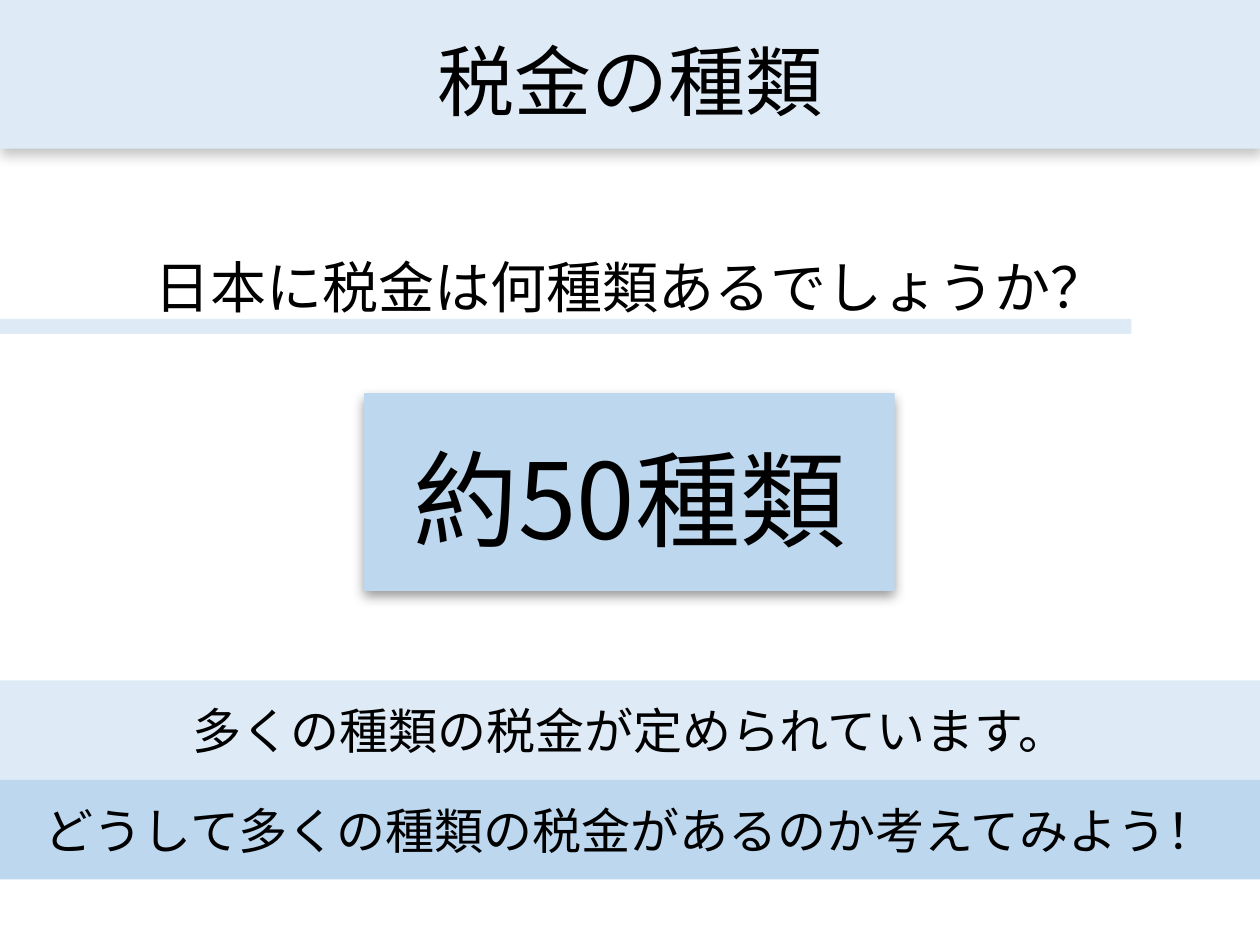
from lxml.etree import SubElement
from pptx import Presentation
from pptx.dml.color import RGBColor
from pptx.enum.shapes import MSO_SHAPE as Shape
from pptx.enum.text import MSO_ANCHOR as Anchor, PP_ALIGN as Align
from pptx.oxml.ns import qn
from pptx.util import Inches, Pt

PALE, BLUE, BLACK = "DEEBF7", "BDD7EE", "000000"
JAPANESE = "Noto Sans CJK JP"
RAISED = (0, 0.08, 0, 0)
LEVEL = (0.1, 0, 0.1, 0)


def color(value):
    return RGBColor.from_string(value)


def apply(target, values):
    for name, value in values.items():
        setattr(target, name, value)


def write(shape, text, size, insets=LEVEL, font=JAPANESE):
    frame = shape.text_frame
    left, top, right, bottom = map(Inches, insets)
    apply(frame, {
        "word_wrap": True, "vertical_anchor": Anchor.MIDDLE,
        "margin_left": left, "margin_top": top,
        "margin_right": right, "margin_bottom": bottom,
    })
    para = frame.paragraphs[0]
    para.alignment = Align.CENTER
    span = para.add_run()
    span.text = text
    apply(span.font, {"size": Pt(size), "name": font})
    span.font.color.rgb = color(BLACK)
    SubElement(span.font._element, qn("a:ea"), typeface=JAPANESE)


def add_band(page, box, fill):
    band = page.shapes.add_shape(Shape.RECTANGLE, *map(Inches, box))
    band.fill.solid()
    band.fill.fore_color.rgb = color(fill)
    band.line.fill.background()
    band.shadow.inherit = False
    return band


def cast_shadow(shape, opacity):
    effects = shape._element.spPr.find(qn("a:effectLst"))
    shadow = SubElement(effects, qn("a:outerShdw"), blurRad=str(Pt(7)),
                        dist=str(Pt(3)), dir="5400000", algn="t", rotWithShape="0")
    tint = SubElement(shadow, qn("a:srgbClr"), val=BLACK)
    SubElement(tint, qn("a:alpha"), val=str(opacity * 1000))


def add_title(page, box):
    title = add_band(page, box, PALE)
    cast_shadow(title, 23)
    write(title, "税金の種類", 44, RAISED, "Arial")


def add_question(page, box):
    left, top, width, height = box
    question = page.shapes.add_textbox(*map(Inches, box))
    write(question, "日本に税金は何種類あるでしょうか？", 32)
    add_band(page, (0, top + 0.85, left + width - 0.75, 0.12), PALE)


def add_answer(page, box):
    answer = add_band(page, box, BLUE)
    cast_shadow(answer, 40)
    write(answer, "約50種類", 60, RAISED)


def add_summary(page, box):
    left, top, width, height = box
    rows = [
        ("多くの種類の税金が定められています。", PALE),
        ("どうして多くの種類の税金があるのか考えてみよう！", BLUE),
    ]
    row_height = height / len(rows)
    for index, (text, fill) in enumerate(rows):
        band = add_band(page, (left, top + index * row_height, width, row_height), fill)
        write(band, text, 28)


def main():
    deck = Presentation()
    apply(deck, {"slide_width": Inches(10), "slide_height": Inches(7.5)})
    page = deck.slides.add_slide(deck.slide_layouts[6])
    add_title(page, (0, 0, 10, 1.18))
    add_question(page, (0.28, 1.68, 9.45, 1.18))
    add_answer(page, (2.89, 3.12, 4.21, 1.57))
    add_summary(page, (0, 5.4, 10, 1.58))
    deck.save("out.pptx")


if __name__ == "__main__":
    main()
